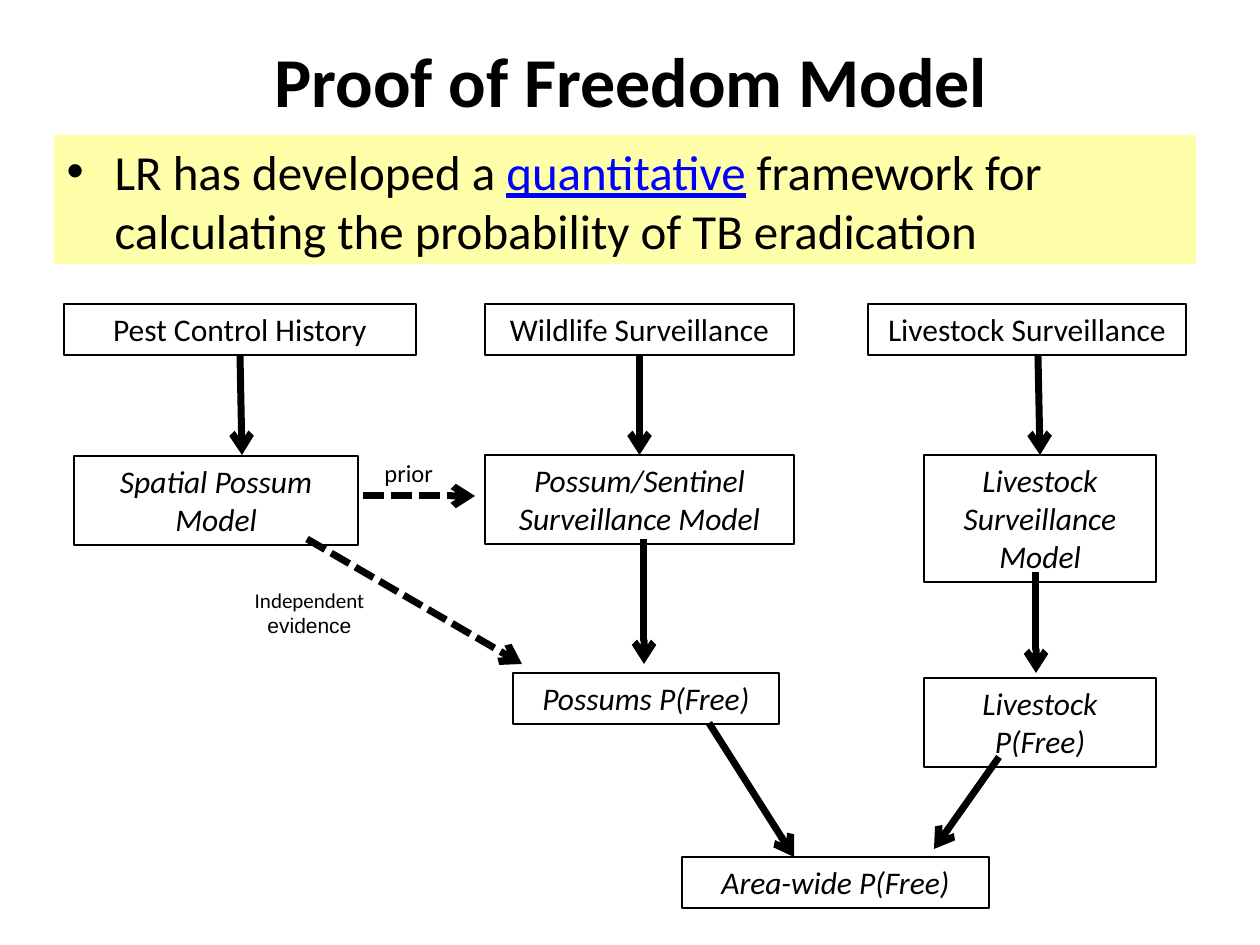
from dataclasses import dataclass
from typing import Any, Optional

import lxml.etree
import pptx
import pptx.dml.color
import pptx.enum.dml
import pptx.enum.shapes
import pptx.enum.text
import pptx.oxml.ns
import pptx.util

PX_PER_INCH = 126
TOP, BOTTOM = 0, 2
CENTER = pptx.enum.text.PP_ALIGN.CENTER
LEFT = pptx.enum.text.PP_ALIGN.LEFT


@dataclass(frozen=True)
class Theme:
    ink: str = "000000"
    link: str = "0000FF"
    highlight: str = "FFFF99"
    highlight_alpha: int = 83000
    font: str = "Calibri"
    second_font: str = "Arial"
    title: int = 40
    body: int = 28
    box: int = 18
    prior: int = 14
    evidence: int = 12
    border: float = 0.75
    arrow: int = 4


THEME = Theme()


@dataclass(frozen=True)
class Box:
    text: str
    left: int
    top: int
    width: int
    height: int
    italic: bool = True


@dataclass(frozen=True)
class Arrow:
    start: tuple[int, int]
    end: tuple[int, int]
    dashed: bool = False
    source: Optional[str] = None
    target: Optional[str] = None


BOXES = [
    Box("Pest Control History", 64, 304, 352, 51, italic=False),
    Box("Spatial Possum Model", 74, 456, 284, 89),
    Box("Possum/Sentinel Surveillance Model", 485, 455, 309, 89),
    Box("Livestock Surveillance Model", 924, 455, 232, 127),
    Box("Possums P(Free)", 513, 673, 266, 51),
    Box("Livestock P(Free)", 924, 678, 232, 89),
    Box("Area-wide P(Free)", 682, 857, 307, 51),
    Box("Wildlife Surveillance", 485, 304, 309, 51, italic=False),
    Box("Livestock Surveillance", 868, 304, 318, 51, italic=False),
]

ARROWS = [
    Arrow((644, 539), (644, 664)),
    Arrow((1036, 572), (1036, 673)),
    Arrow((709, 723), (794, 857)),
    Arrow((999, 757), (934, 849)),
    Arrow((242, 355), (242, 455), source="Pest Control History"),
    Arrow((639, 355), (639, 455), source="Wildlife Surveillance",
          target="Possum/Sentinel Surveillance Model"),
    Arrow((1038, 355), (1040, 455), target="Livestock Surveillance Model"),
    Arrow((307, 539), (522, 664), dashed=True),
    Arrow((363, 496), (475, 496), dashed=True),
]


def px(length: int) -> pptx.util.Emu:
    return pptx.util.Emu(round(length * 914400 / PX_PER_INCH))


def color(value: str) -> pptx.dml.color.RGBColor:
    return pptx.dml.color.RGBColor.from_string(value)


def add_element(parent: Any, tag: str, **attributes: str) -> Any:
    return lxml.etree.SubElement(parent, pptx.oxml.ns.qn(tag), attributes)


def add_text(paragraph: Any, text: str, *, size: int, font: str = THEME.font,
             ink: str = THEME.ink, bold: bool = False, italic: bool = False,
             underline: bool = False, align: Any = CENTER) -> None:
    """Append one formatted run to the paragraph."""
    paragraph.alignment = align
    run = paragraph.add_run()
    run.text = text
    run.font.name = font
    run.font.size = pptx.util.Pt(size)
    run.font.bold = bold
    run.font.italic = italic
    run.font.underline = underline
    run.font.color.rgb = color(ink)


def place(shape: Any, left: int, top: int, width: int, height: int) -> None:
    shape.left, shape.top = px(left), px(top)
    shape.width, shape.height = px(width), px(height)


def fill_title(slide: Any) -> None:
    title = slide.shapes.title
    place(title, 64, 0, 1134, 158)
    title.text_frame.vertical_anchor = pptx.enum.text.MSO_ANCHOR.MIDDLE
    add_text(title.text_frame.paragraphs[0], "Proof of Freedom Model",
             size=THEME.title, bold=True)


def fill_body(slide: Any) -> None:
    body = slide.placeholders[1]
    place(body, 54, 135, 1142, 129)
    body.fill.solid()
    body.fill.fore_color.rgb = color(THEME.highlight)
    fill_color = body.fill._xPr.find(".//" + pptx.oxml.ns.qn("a:srgbClr"))
    add_element(fill_color, "a:alpha", val=str(THEME.highlight_alpha))
    body.text_frame.auto_size = pptx.enum.text.MSO_AUTO_SIZE.NONE
    body.text_frame.vertical_anchor = pptx.enum.text.MSO_ANCHOR.TOP

    paragraph = body.text_frame.paragraphs[0]
    paragraph.space_before = pptx.util.Pt(0)
    properties = paragraph._p.get_or_add_pPr()
    properties.set("marL", str(px(48)))
    properties.set("indent", str(-px(48)))
    add_element(properties, "a:buFont", typeface=THEME.second_font)
    add_element(properties, "a:buChar", char="•")
    add_text(paragraph, "LR has developed a ", size=THEME.body, align=LEFT)
    add_text(paragraph, "quantitative", size=THEME.body, ink=THEME.link,
             underline=True, align=LEFT)
    add_text(paragraph, " framework for calculating the probability of TB eradication",
             size=THEME.body, align=LEFT)


def add_box(slide: Any, box: Box) -> Any:
    shape = slide.shapes.add_shape(
        pptx.enum.shapes.MSO_SHAPE.RECTANGLE,
        px(box.left), px(box.top), px(box.width), px(box.height))
    shape.shadow.inherit = False
    shape.fill.background()
    shape.line.color.rgb = color(THEME.ink)
    shape.line.width = pptx.util.Pt(THEME.border)
    shape.text_frame.word_wrap = True
    shape.text_frame.vertical_anchor = pptx.enum.text.MSO_ANCHOR.TOP
    add_text(shape.text_frame.paragraphs[0], box.text, size=THEME.box, italic=box.italic)
    return shape


def add_arrow(slide: Any, arrow: Arrow, shapes: dict[str, Any]) -> None:
    connector = slide.shapes.add_connector(
        pptx.enum.shapes.MSO_CONNECTOR.STRAIGHT,
        *map(px, arrow.start), *map(px, arrow.end))
    if arrow.source:
        connector.begin_connect(shapes[arrow.source], BOTTOM)
    if arrow.target:
        connector.end_connect(shapes[arrow.target], TOP)
    connector.line.color.rgb = color(THEME.ink)
    connector.line.width = pptx.util.Pt(THEME.arrow)
    if arrow.dashed:
        connector.line.dash_style = pptx.enum.dml.MSO_LINE.SQUARE_DOT
    add_element(connector.line._get_or_add_ln(), "a:tailEnd", type="arrow")
    add_element(connector._element.spPr, "a:effectLst")


def add_label(slide: Any, left: int, top: int, width: int, height: int) -> Any:
    """Add a wrapping text box and return its first paragraph."""
    label = slide.shapes.add_textbox(px(left), px(top), px(width), px(height))
    label.text_frame.word_wrap = True
    return label.text_frame.paragraphs[0]


def main() -> None:
    presentation = pptx.Presentation()
    presentation.slide_width, presentation.slide_height = px(1260), px(945)
    slide = presentation.slides.add_slide(presentation.slide_layouts[1])
    fill_title(slide)
    fill_body(slide)
    shapes = {box.text: add_box(slide, box) for box in BOXES}
    for arrow in ARROWS:
        add_arrow(slide, arrow, shapes)
    add_text(add_label(slide, 372, 452, 84, 43), "prior", size=THEME.prior, align=LEFT)
    evidence = add_label(slide, 219, 581, 181, 63)
    add_text(evidence, "Independent ", size=THEME.evidence)
    add_text(evidence, "evidence", size=THEME.evidence, font=THEME.second_font)
    presentation.save("out.pptx")


if __name__ == "__main__":
    main()
